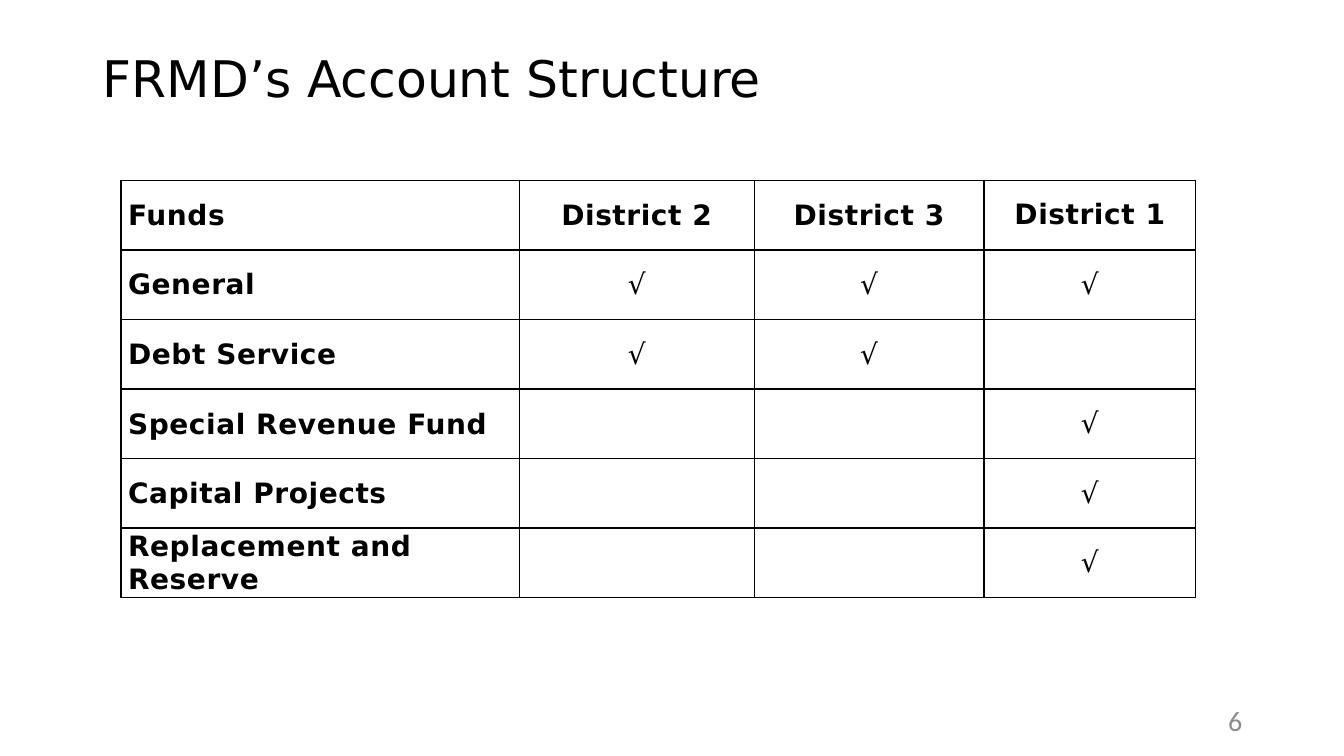
from lxml.etree import SubElement
from pptx import Presentation
from pptx.dml.color import RGBColor
from pptx.enum.text import MSO_ANCHOR, PP_ALIGN
from pptx.oxml import parse_xml
from pptx.oxml.ns import nsdecls
from pptx.util import Inches, Pt

COLORS = {"ink": "000000", "paper": "FFFFFF", "muted": "8C8C8C"}
FUNDS = {
    "General": (1, 1, 1),
    "Debt Service": (1, 1, 0),
    "Special Revenue Fund": (0, 0, 1),
    "Capital Projects": (0, 0, 1),
    "Replacement and Reserve": (0, 0, 1),
}
HEADER = ["Funds", "District 2", "District 3", "District 1"]
COLUMN_WIDTHS = [3.95, 2.33, 2.28, 2.1]
ROW_HEIGHT = 0.69


def color(name):
    return RGBColor.from_string(COLORS[name])


def set_format(target, values):
    for name, value in values.items():
        setattr(target, name, value)


class SlideBuilder:
    heading_font = "DejaVu Sans"
    number_font = "Calibri"
    cell_margins = (0.07, 0.01, 0.07, 0)

    def __init__(self, presentation):
        self.slide = presentation.slides.add_slide(presentation.slide_layouts[5])

    def add_text(self, frame, text, font, size, ink="ink", bold=False, **paragraph_format):
        paragraph = frame.paragraphs[0]
        set_format(paragraph, paragraph_format)
        run = paragraph.add_run()
        run.text = text
        set_format(run.font, {"name": font, "size": Pt(size), "bold": bold})
        run.font.color.rgb = color(ink)
        return run

    def place(self, shape, left, top, width, height):
        set_format(shape, {"left": Inches(left), "top": Inches(top),
                           "width": Inches(width), "height": Inches(height)})
        set_format(shape.text_frame, {"word_wrap": True,
                                      "vertical_anchor": MSO_ANCHOR.MIDDLE})
        return shape.text_frame

    def title(self, text, *box):
        frame = self.place(self.slide.shapes.title, *box)
        self.add_text(frame, text, self.heading_font, 36,
                      alignment=PP_ALIGN.LEFT, line_spacing=0.9)

    def page_number(self, text, *box):
        shape = self.slide.shapes.add_textbox(*map(Inches, box))
        self.add_text(self.place(shape, *box), text, self.number_font, 20, "muted",
                      alignment=PP_ALIGN.RIGHT)

    def borders(self, cell):
        properties = cell._tc.get_or_add_tcPr()
        for position, side in enumerate(("lnL", "lnR", "lnT", "lnB")):
            line = parse_xml(f'<a:{side} {nsdecls("a")} w="{Pt(1)}"/>')
            fill = SubElement(line, line.tag.replace(side, "solidFill"))
            SubElement(fill, line.tag.replace(side, "srgbClr"), val=COLORS["ink"])
            properties.insert(position, line)

    def cell(self, cell, text, bold, alignment, margins):
        cell.fill.solid()
        cell.fill.fore_color.rgb = color("paper")
        sides = ("margin_left", "margin_top", "margin_right", "margin_bottom")
        set_format(cell, dict(zip(sides, map(Inches, margins))))
        cell.vertical_anchor = MSO_ANCHOR.MIDDLE
        self.borders(cell)
        if text:
            run = self.add_text(cell.text_frame, text, self.heading_font, 20, bold=bold,
                                alignment=alignment, space_before=Pt(3), space_after=Pt(3))
            run._r.get_or_add_rPr().set("spc", "40")

    def table(self, rows, left, top, widths, row_height):
        table = self.slide.shapes.add_table(
            len(rows), len(widths), Inches(left), Inches(top),
            Inches(sum(widths)), Inches(row_height * len(rows))).table
        for column, width in zip(table.columns, widths):
            column.width = Inches(width)
        for row_index, texts in enumerate(rows):
            table.rows[row_index].height = Inches(row_height)
            for column_index, text in enumerate(texts):
                first, last = column_index == 0, column_index == len(widths) - 1
                self.cell(table.cell(row_index, column_index), text,
                          bold=first or row_index == 0,
                          alignment=PP_ALIGN.LEFT if first else PP_ALIGN.CENTER,
                          margins=(0, 0, 0, 0) if last else self.cell_margins)


def main():
    presentation = Presentation()
    set_format(presentation, {"slide_width": Inches(13.33), "slide_height": Inches(7.5)})
    builder = SlideBuilder(presentation)

    # Title and page number
    builder.title("FRMD’s Account Structure", 0.92, 0.4, 11.5, 0.81)
    builder.page_number("6", 9.42, 6.95, 3, 0.4)

    # Funds held by each district
    rows = [HEADER] + [[fund] + ["√" if held else "" for held in districts]
                       for fund, districts in FUNDS.items()]
    builder.table(rows, 1.2, 1.79, COLUMN_WIDTHS, ROW_HEIGHT)

    presentation.save("out.pptx")


if __name__ == "__main__":
    main()
